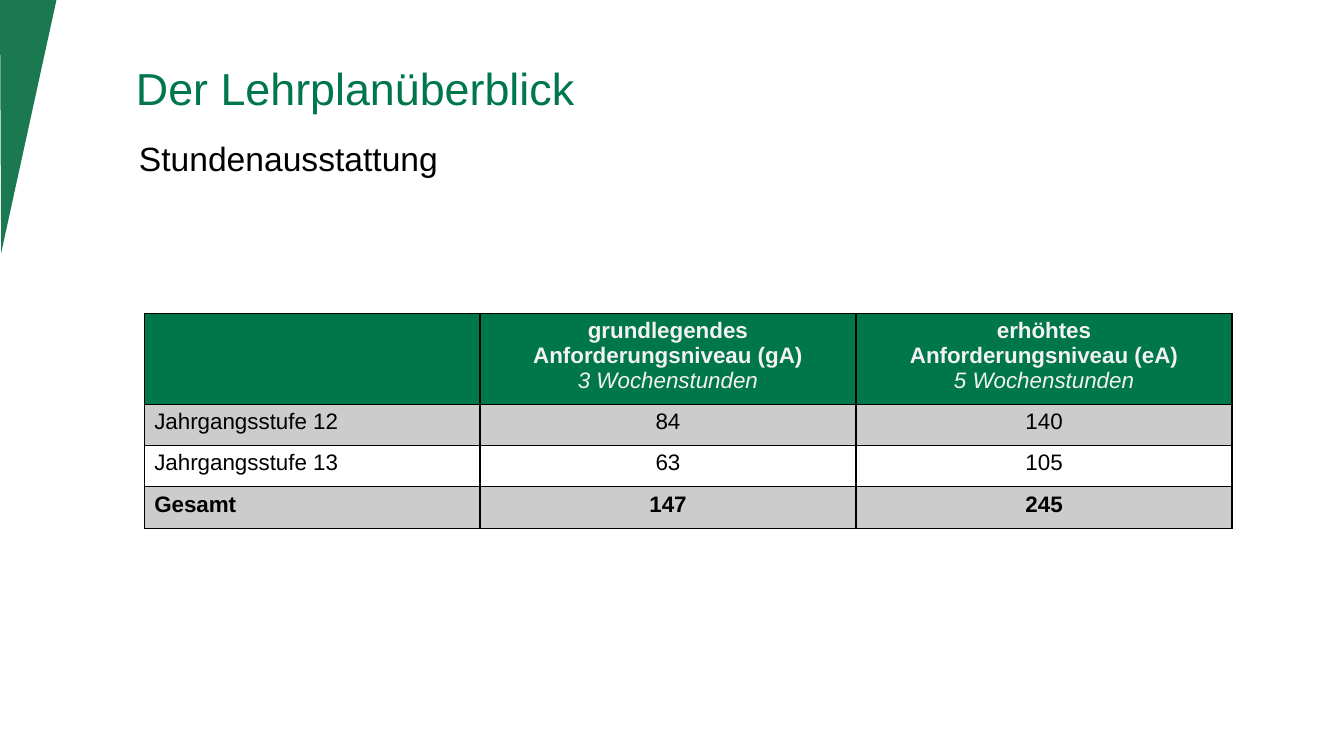
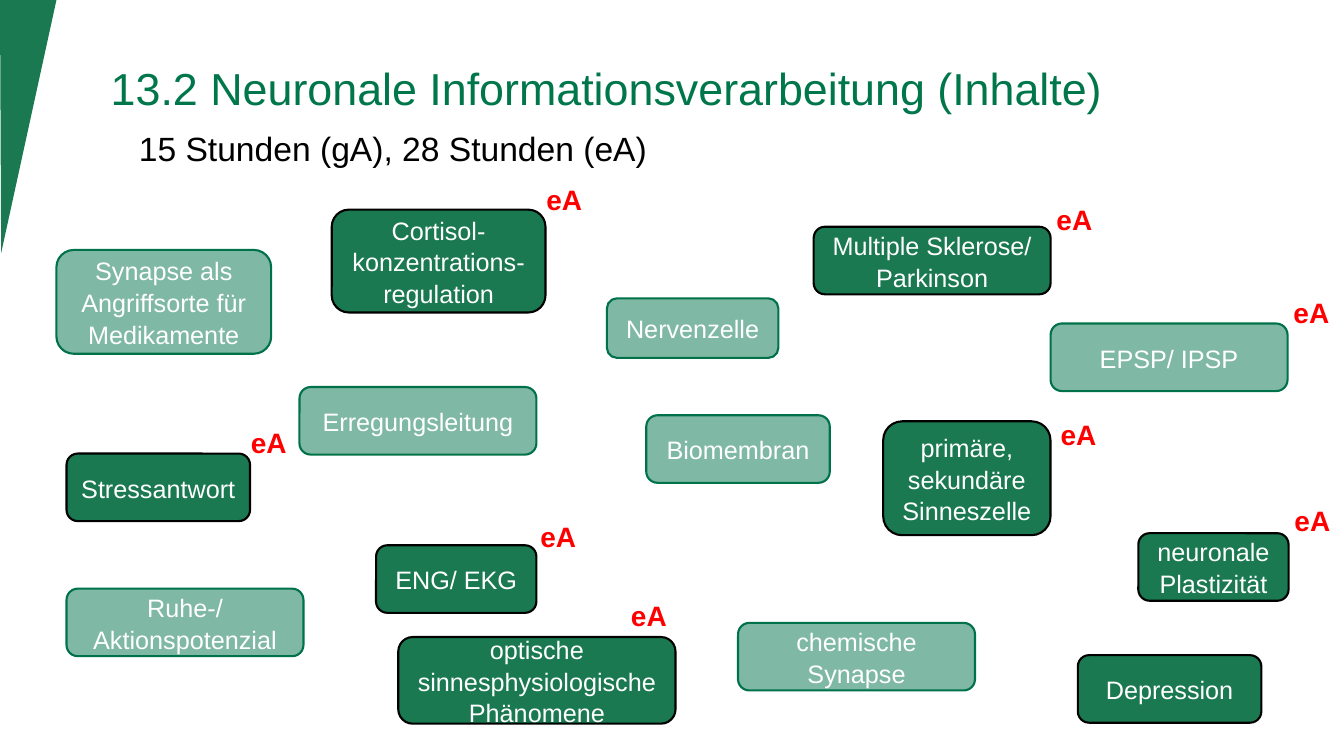
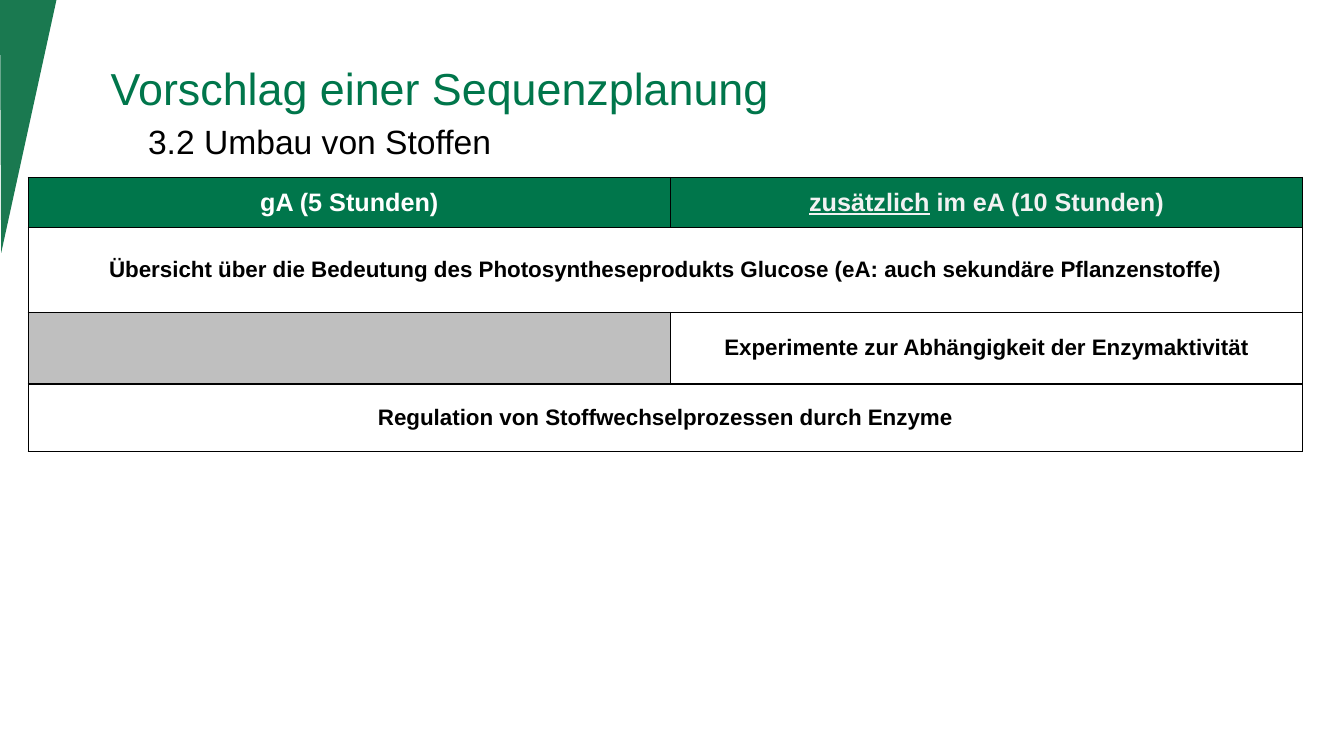
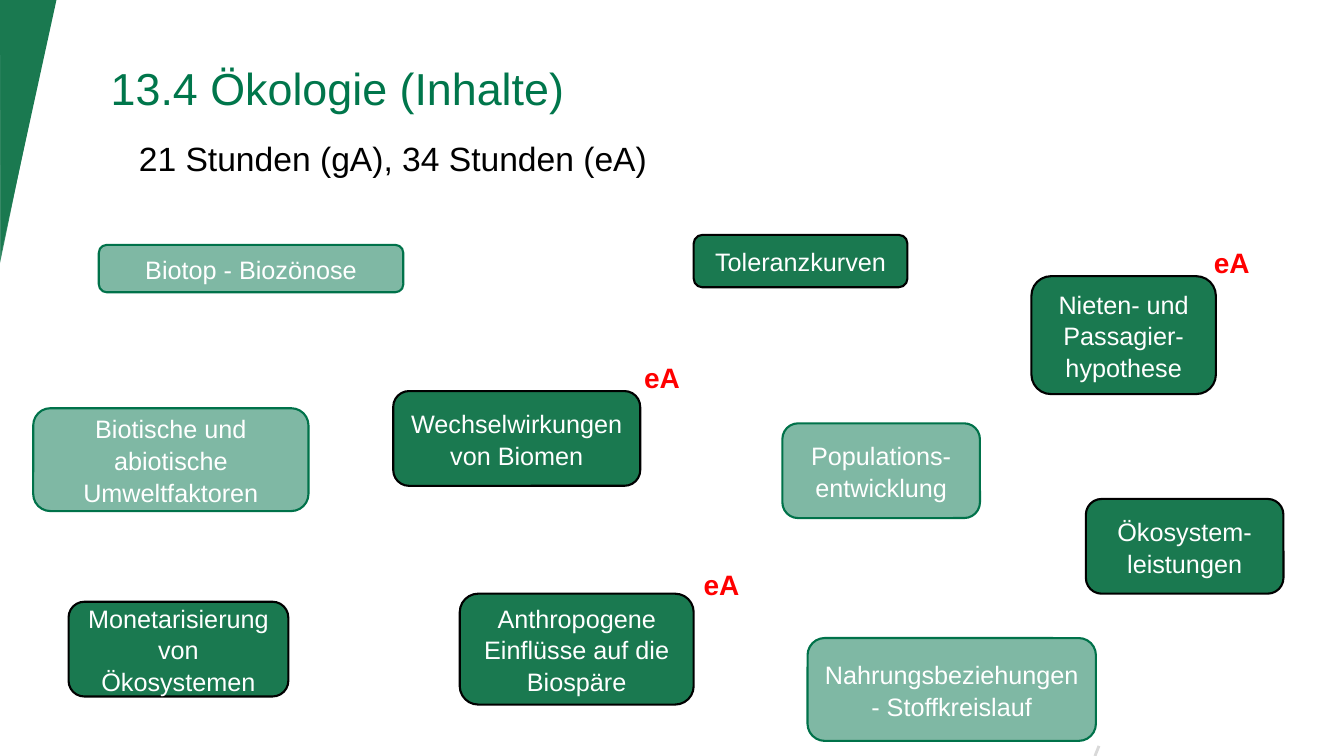
from dataclasses import dataclass
from lxml.etree import SubElement
from pptx import Presentation
from pptx.dml.color import RGBColor
from pptx.enum.shapes import MSO_CONNECTOR, MSO_SHAPE
from pptx.enum.text import MSO_ANCHOR, PP_ALIGN
from pptx.oxml import parse_xml
from pptx.oxml.ns import nsdecls, qn
from pptx.util import Inches, Pt


@dataclass(frozen=True)
class Theme:
    font: str = "Arial"
    heading: str = "00764B"
    accent: str = "1A7950"
    basic: str = "00724A"
    black: str = "000000"
    white: str = "FFFFFF"
    soft_white: str = "F2F2F2"
    band: str = "CCCCCC"
    blocked: str = "BFBFBF"
    hairline: str = "D9D9D9"
    tag: str = "FF0000"
    title_size: int = 32
    subtitle_size: int = 24
    tag_size: int = 20
    topic_size: int = 18
    table_size: int = 16


THEME = Theme()


@dataclass(frozen=True)
class Run:
    text: str
    size: int = THEME.table_size
    color: str = THEME.black
    bold: bool = False
    italic: bool = False
    underline: bool = False


@dataclass(frozen=True)
class Cell:
    paragraphs: tuple = ()
    fill: str = THEME.white
    align: PP_ALIGN = PP_ALIGN.CENTER


@dataclass(frozen=True)
class Topic:
    text: str
    box: tuple
    advanced: bool = False


def rgb(color):
    return RGBColor.from_string(color)


def write(frame, paragraphs, align=PP_ALIGN.LEFT, indent=0, spacing=None):
    for index, runs in enumerate(paragraphs):
        paragraph = frame.paragraphs[0] if index == 0 else frame.add_paragraph()
        paragraph.alignment = align
        if spacing:
            paragraph.line_spacing = spacing
        if indent:
            paragraph._p.get_or_add_pPr().set("marL", str(Inches(indent)))
        for part in runs:
            run = paragraph.add_run()
            run.text = part.text
            font = run.font
            font.name = THEME.font
            font.size = Pt(part.size)
            font.color.rgb = rgb(part.color)
            font.bold = part.bold
            font.italic = part.italic
            font.underline = part.underline


def add_text(slide, box, run, indent=0, anchor=MSO_ANCHOR.TOP):
    frame = slide.shapes.add_textbox(*map(Inches, box)).text_frame
    frame.word_wrap = True
    frame.vertical_anchor = anchor
    write(frame, [[run]], indent=indent)


def add_filled(slide, preset, box, color, opacity=100):
    shape = slide.shapes.add_shape(preset, *map(Inches, box))
    shape.shadow.inherit = False
    shape.fill.solid()
    shape.fill.fore_color.rgb = rgb(color)
    shape.line.fill.background()
    if opacity < 100:
        tint = shape._element.spPr.find(qn("a:solidFill"))[0]
        SubElement(tint, qn("a:alpha"), val=str(opacity * 1000))
    return shape


def add_corner(slide, width, height, apex, opacity=100):
    corner = add_filled(slide, MSO_SHAPE.ISOSCELES_TRIANGLE,
                        (0, 0, width, height), THEME.accent, opacity)
    corner.rotation = 180
    corner.adjustments[0] = apex


def add_hairline(slide, start, end):
    hairline = slide.shapes.add_connector(
        MSO_CONNECTOR.STRAIGHT, *map(Inches, start + end))
    hairline.line.color.rgb = rgb(THEME.hairline)
    hairline.line.width = Pt(2)
    SubElement(hairline._element.spPr, qn("a:effectLst"))


def add_heading(slide, title, subtitle, subtitle_top=1.32,
                title_indent=1.0, subtitle_indent=1.28):
    add_corner(slide, 0.56, 2.51, 0.98)
    add_text(slide, (0, 0.39, 13.33, 0.95),
             Run(title, THEME.title_size, THEME.heading),
             title_indent, MSO_ANCHOR.MIDDLE)
    add_text(slide, (0, subtitle_top, 13.33, 0.47),
             Run(subtitle, THEME.subtitle_size), subtitle_indent)


def add_topic(slide, topic):
    fill, outline, opacity = ((THEME.accent, THEME.black, 100) if topic.advanced
                              else (THEME.basic, THEME.basic, 50))
    card = add_filled(slide, MSO_SHAPE.ROUNDED_RECTANGLE, topic.box, fill, opacity)
    card.line.color.rgb = rgb(outline)
    card.line.width = Pt(1.5)
    frame = card.text_frame
    frame.word_wrap = True
    frame.vertical_anchor = MSO_ANCHOR.MIDDLE
    lines = [[Run(line, THEME.topic_size, THEME.white)]
             for line in topic.text.split("\n")]
    write(frame, lines, PP_ALIGN.CENTER, spacing=1.05)


def add_topic_map(slide, topics, tag_places):
    for topic in topics:
        add_topic(slide, topic)
    for left, top in tag_places:
        add_text(slide, (left, top, 0.59, 0.44),
                 Run("eA", THEME.tag_size, THEME.tag, bold=True))


def add_borders(cell):
    properties = cell._tc.get_or_add_tcPr()
    for index, side in enumerate(("lnL", "lnR", "lnT", "lnB")):
        properties.insert(index, parse_xml(
            f'<a:{side} {nsdecls("a")} w="{Pt(1)}"><a:solidFill>'
            f'<a:srgbClr val="{THEME.black}"/></a:solidFill></a:{side}>'))


def add_grid(slide, origin, widths, heights, rows, anchor=MSO_ANCHOR.TOP):
    size = (sum(widths), sum(heights))
    table = slide.shapes.add_table(
        len(rows), len(widths), *map(Inches, origin + size)).table
    table.first_row = table.horz_banding = False
    for column, width in zip(table.columns, widths):
        column.width = Inches(width)
    for row, height in zip(table.rows, heights):
        row.height = Inches(height)
    for row_index, entries in enumerate(rows):
        if len(entries) < len(widths):
            table.cell(row_index, 0).merge(table.cell(row_index, len(widths) - 1))
        for column_index in range(len(widths)):
            cell = table.cell(row_index, column_index)
            entry = entries[min(column_index, len(entries) - 1)]
            cell.fill.solid()
            cell.fill.fore_color.rgb = rgb(entry.fill)
            cell.vertical_anchor = anchor
            add_borders(cell)
            if not cell.is_spanned:
                write(cell.text_frame, entry.paragraphs, entry.align)


def level_header(first_line, second_line, hours):
    return Cell(((Run(first_line, color=THEME.soft_white, bold=True),),
                 (Run(second_line, color=THEME.soft_white, bold=True),),
                 (Run(hours, color=THEME.soft_white, italic=True),)), THEME.heading)


def hours_row(label, basic, advanced, fill=THEME.band, bold=False):
    aligns = (PP_ALIGN.LEFT, PP_ALIGN.CENTER, PP_ALIGN.CENTER)
    return [Cell(((Run(text, bold=bold),),), fill, align)
            for text, align in zip((label, basic, advanced), aligns)]


def sequence_cell(text):
    return Cell(((Run(text, bold=True),),))


def build_hours(slide):
    add_heading(slide, "Der Lehrplanüberblick", "Stundenausstattung", title_indent=1.25)
    add_grid(slide, (1.43, 3.11), (3.33, 3.73, 3.73), (0.84, 0.41, 0.41, 0.41), [
        [Cell(fill=THEME.heading),
         level_header("grundlegendes", "Anforderungsniveau (gA)", "3 Wochenstunden"),
         level_header("erhöhtes", "Anforderungsniveau (eA)", "5 Wochenstunden")],
        hours_row("Jahrgangsstufe 12", "84", "140"),
        hours_row("Jahrgangsstufe 13", "63", "105", THEME.white),
        hours_row("Gesamt", "147", "245", bold=True),
    ])


def build_neurons(slide):
    add_heading(slide, "13.2 Neuronale Informationsverarbeitung (Inhalte)",
                "15 Stunden (gA), 28 Stunden (eA)", 1.22)
    add_topic_map(slide, [
        Topic("Nervenzelle", (6.02, 2.96, 1.7, 0.59)),
        Topic("Multiple Sklerose/\nParkinson", (8.07, 2.25, 2.35, 0.67), True),
        Topic("Ruhe-/ Aktionspotenzial", (0.66, 5.84, 2.35, 0.67)),
        Topic("chemische Synapse", (7.32, 6.18, 2.35, 0.67)),
        Topic("Erregungsleitung", (2.97, 3.84, 2.35, 0.67)),
        Topic("EPSP/ IPSP", (10.42, 3.21, 2.35, 0.67)),
        Topic("Synapse als Angriffsorte für Medikamente", (0.56, 2.48, 2.13, 1.03)),
        Topic("Biomembran", (6.41, 4.12, 1.82, 0.67)),
        Topic("primäre, sekundäre Sinneszelle", (8.76, 4.18, 1.66, 1.13), True),
        Topic("ENG/ EKG", (3.73, 5.41, 1.59, 0.67), True),
        Topic("Stressantwort", (0.66, 4.5, 1.82, 0.67), True),
        Topic("neuronale\nPlastizität", (11.29, 5.29, 1.49, 0.67), True),
        Topic("Cortisol-konzentrations-regulation", (3.29, 2.08, 2.12, 1.02), True),
        Topic("optische sinnesphysiologische Phänomene",
              (3.95, 6.32, 2.75, 0.86), True),
        Topic("Depression", (10.69, 6.5, 1.82, 0.67), True),
    ], [(5.32, 1.76), (10.38, 1.96), (5.26, 5.1), (12.73, 2.88),
        (2.39, 4.17), (12.74, 4.95), (6.16, 5.89), (10.42, 4.09)])


def build_sequence(slide):
    add_heading(slide, "Vorschlag einer Sequenzplanung", "3.2 Umbau von Stoffen",
                1.15, subtitle_indent=1.37)
    size = THEME.topic_size
    add_grid(slide, (0.28, 1.76), (6.37, 6.27), (0.5, 0.84, 0.71, 0.67), [
        [Cell(((Run("gA (5 Stunden)", size, THEME.white, bold=True),),), THEME.heading),
         Cell(((Run("zusätzlich", size, THEME.soft_white, bold=True, underline=True),
                Run(" im eA (10 Stunden)", size, THEME.soft_white, bold=True)),),
              THEME.heading)],
        [sequence_cell("Übersicht über die Bedeutung des Photosyntheseprodukts "
                       "Glucose (eA: auch sekundäre Pflanzenstoffe)")],
        [Cell(fill=THEME.blocked),
         sequence_cell("Experimente zur Abhängigkeit der Enzymaktivität")],
        [sequence_cell("Regulation von Stoffwechselprozessen durch Enzyme")],
    ], MSO_ANCHOR.MIDDLE)


def build_ecology(slide):
    add_corner(slide, 0.54, 2.61, 1, 85)
    add_hairline(slide, (10.9, 7.4), (10.86, 7.5))
    add_heading(slide, "13.4 Ökologie (Inhalte)", "21 Stunden (gA), 34 Stunden (eA)")
    add_topic_map(slide, [
        Topic("Populations-\nentwicklung", (7.76, 4.2, 1.96, 0.94)),
        Topic("Ökosystem-\nleistungen", (10.77, 4.95, 1.96, 0.94), True),
        Topic("Biotop - Biozönose", (0.98, 2.43, 3.02, 0.47)),
        Topic("Biotische und abiotische\nUmweltfaktoren", (0.33, 4.05, 2.73, 1.02)),
        Topic("Toleranzkurven", (6.88, 2.33, 2.12, 0.52), True),
        Topic("Nieten- und Passagier-\nhypothese", (10.23, 2.74, 1.83, 1.17), True),
        Topic("Monetarisierung von Ökosystemen", (0.68, 5.97, 2.18, 0.94), True),
        Topic("Wechselwirkungen\nvon Biomen", (3.9, 3.88, 2.45, 0.94), True),
        Topic("Anthropogene Einflüsse auf die\nBiospäre",
              (4.56, 5.89, 2.32, 1.1), True),
        Topic("Nahrungsbeziehungen - Stoffkreislauf", (8.01, 6.33, 2.86, 1.02)),
    ], [(11.94, 2.39), (6.29, 3.53), (6.88, 5.58)])


def main():
    deck = Presentation()
    deck.slide_width, deck.slide_height = Inches(13.33), Inches(7.5)
    blank = deck.slide_layouts[6]
    for build in (build_hours, build_neurons, build_sequence, build_ecology):
        build(deck.slides.add_slide(blank))
    deck.save("out.pptx")


if __name__ == "__main__":
    main()
